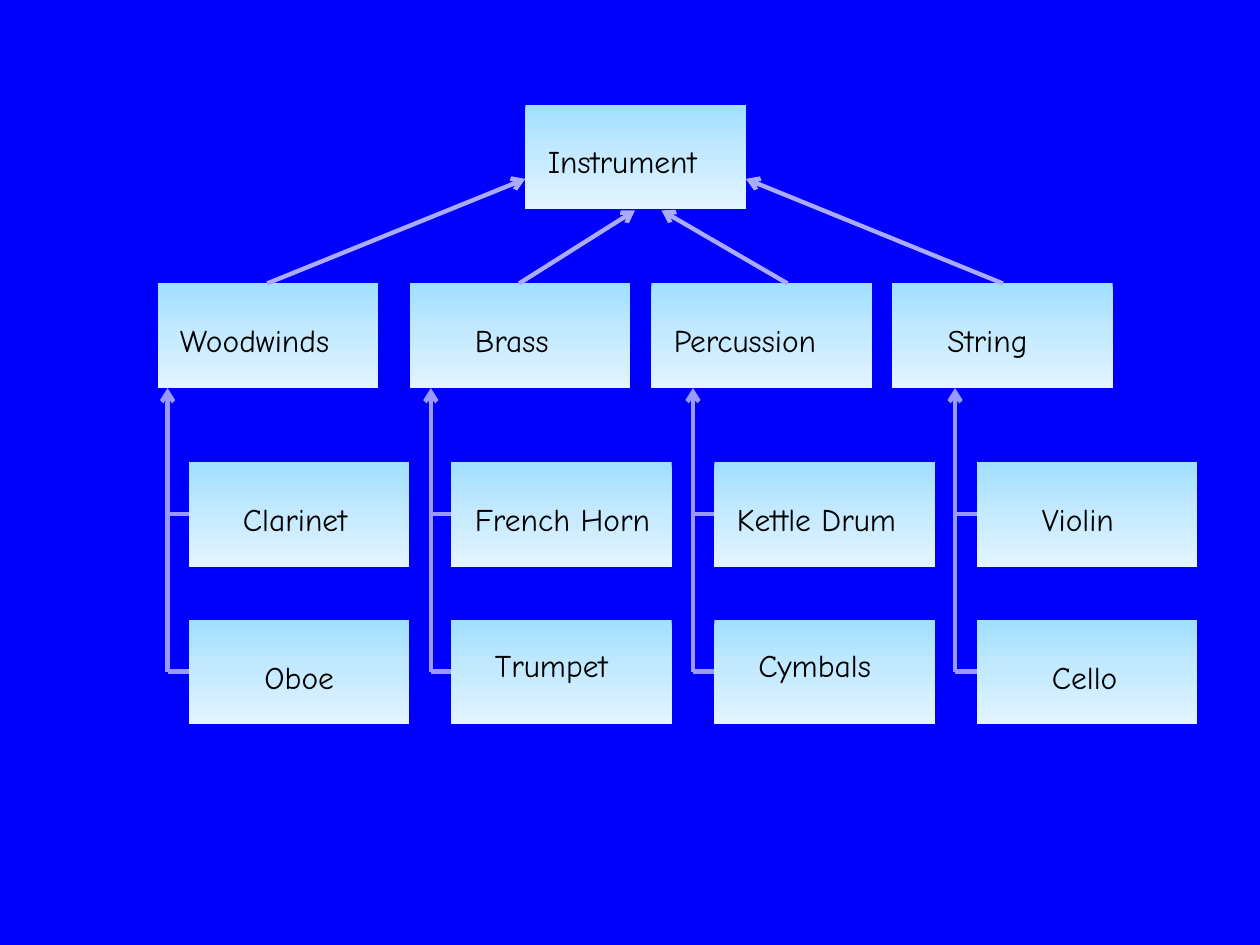
from copy import deepcopy

from lxml import etree
from pptx import Presentation
from pptx.dml.color import RGBColor
from pptx.enum import shapes, text
from pptx.oxml import ns
from pptx.util import Inches, Pt

BOX_WIDTH, BOX_HEIGHT = 1.75, 0.83
GRADIENT = [(0, "A0DFFF"), (0.5, "C5EAFF"), (1, "E3F4FF")]


def color(value):
    return RGBColor.from_string(value)


def add_line(start, end, line_color, arrow=False):
    line = page.shapes.add_connector(
        shapes.MSO_CONNECTOR.STRAIGHT, *map(Inches, start + end))
    line.line.color.rgb = color(line_color)
    line.line.width = Pt(2.5)
    if arrow:
        etree.SubElement(line.line._get_or_add_ln(), ns.qn("a:tailEnd"), type="arrow")
    etree.SubElement(line._element.spPr, ns.qn("a:effectLst"))


deck = Presentation()
deck.slide_width, deck.slide_height = Inches(10), Inches(7.5)
page = deck.slides.add_slide(deck.slide_layouts[6])
page.background.fill.solid()
page.background.fill.fore_color.rgb = color("0000FF")

# Class boxes: name, box left, box top, label left, label top, label width
classes = [
    ("Instrument", 4.17, 0.83, 4.25, 1.08, 1.55),
    ("Woodwinds", 1.25, 2.25, 1.33, 2.5, 1.53),
    ("Brass", 3.25, 2.25, 3.67, 2.5, 0.86),
    ("Percussion", 5.17, 2.25, 5.25, 2.5, 1.43),
    ("String", 7.08, 2.25, 7.42, 2.5, 0.95),
    ("Clarinet", 1.5, 3.67, 1.83, 3.92, 1.13),
    ("French Horn", 3.58, 3.67, 3.67, 3.92, 1.68),
    ("Kettle Drum", 5.67, 3.67, 5.75, 3.92, 1.65),
    ("Violin", 7.75, 3.67, 8.17, 3.92, 0.84),
    ("Oboe", 1.5, 4.92, 2, 5.17, 0.82),
    ("Trumpet", 3.58, 4.92, 3.83, 5.08, 1.22),
    ("Cymbals", 5.67, 4.92, 5.92, 5.08, 1.15),
    ("Cello", 7.75, 4.92, 8.25, 5.17, 0.76),
]
for name, left, top, label_left, label_top, label_width in classes:
    box = page.shapes.add_shape(
        shapes.MSO_SHAPE.RECTANGLE, Inches(left), Inches(top),
        Inches(BOX_WIDTH), Inches(BOX_HEIGHT))
    box.shadow.inherit = False
    box.line.fill.background()
    box.fill.gradient()
    box.fill.gradient_angle = 270
    stop_list = box._element.spPr.find(".//" + ns.qn("a:gsLst"))
    stop_list.append(deepcopy(stop_list[-1]))
    for stop, (position, stop_color) in zip(box.fill.gradient_stops, GRADIENT):
        stop.position = position
        stop.color.rgb = color(stop_color)

    label = page.shapes.add_textbox(
        Inches(label_left), Inches(label_top), Inches(label_width), Inches(0.4))
    label.text_frame.word_wrap = False
    label.text_frame.auto_size = text.MSO_AUTO_SIZE.SHAPE_TO_FIT_TEXT
    label.text_frame.text = name
    font = label.text_frame.paragraphs[0].runs[0].font
    font.name, font.size = "Comic Neue", Pt(18)
    font.color.rgb = color("000000")

# Arrows from the families up to Instrument
for start, end in [
    ((2.12, 2.25), (4.17, 1.42)),
    ((4.12, 2.25), (5.04, 1.67)),
    ((6.25, 2.25), (5.25, 1.67)),
    ((7.96, 2.25), (5.92, 1.42)),
]:
    add_line(start, end, "AAAAFF", arrow=True)

# Trunk and branches from each pair of instruments to its family
for trunk, branch_end in [(1.33, 1.5), (3.42, 3.58), (5.5, 5.67), (7.58, 7.75)]:
    add_line((trunk, 5.33), (trunk, 3.08), "9999FF", arrow=True)
    for height in (5.33, 4.08):
        add_line((trunk, height), (branch_end, height), "9999FF")

deck.save("out.pptx")
